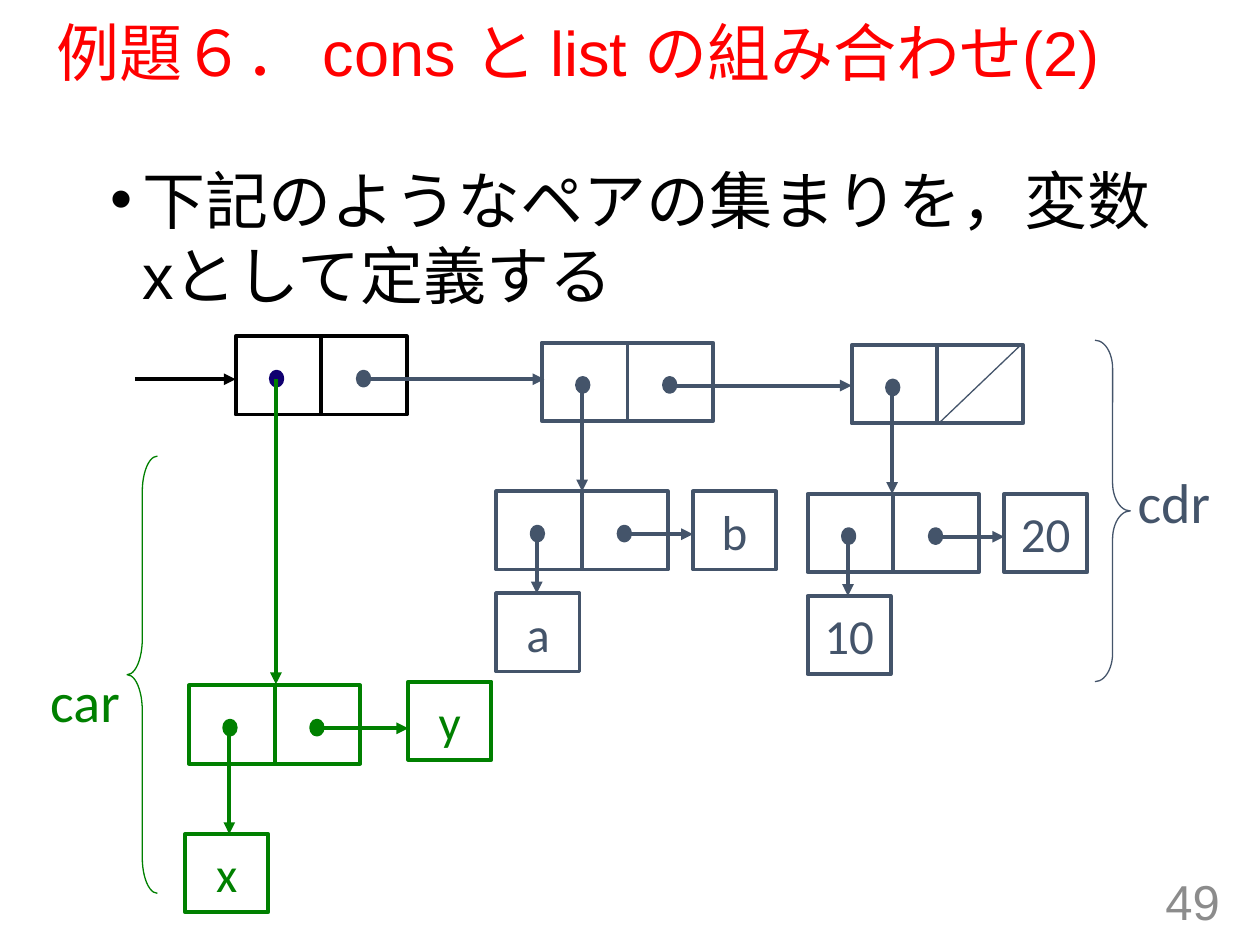
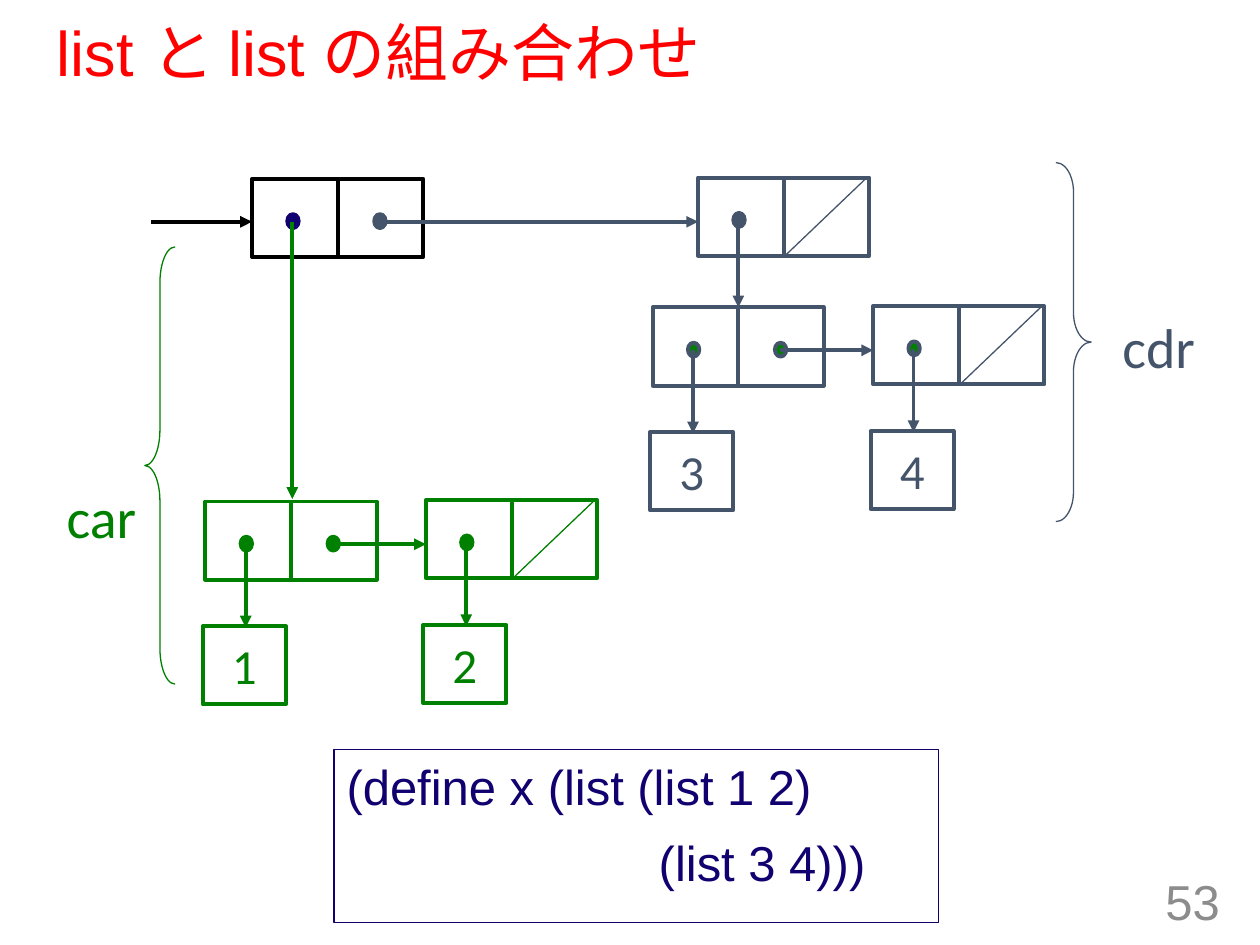
from collections import namedtuple
from dataclasses import dataclass

from lxml import etree
from pptx import Presentation
from pptx import util as u
from pptx.dml.color import RGBColor
from pptx.enum import shapes, text
from pptx.oxml.ns import qn

EMU_PER_PX = 9144
PAIR_WIDTH, CELL_HEIGHT, VALUE_WIDTH = 136, 62, 66
Pair = namedtuple("Pair", "car_x cdr_x pointer_y")


@dataclass(frozen=True)
class Theme:
    title: str = "FF0000"
    black: str = "000000"
    navy: str = "100070"
    green: str = "008000"
    slate: str = "44546A"
    grey: str = "8C8C8C"
    heading_font: str = "Arial"
    label_font: str = "Calibri"
    heading_size: int = 36
    label_size: int = 32
    text_size: int = 28
    thick: float = 2.25
    thin: float = 0.75


def px(*lengths):
    return [u.Emu(length * EMU_PER_PX) for length in lengths]


def write(frame, content, *, size, color, font, align=text.PP_ALIGN.LEFT,
          anchor=text.MSO_ANCHOR.TOP, wrap=True, spacing=None, space_before=0,
          hanging=0, bullet=None):
    frame.word_wrap = wrap
    frame.auto_size = text.MSO_AUTO_SIZE.NONE
    frame.vertical_anchor = anchor
    for index, line in enumerate(content.split("\n")):
        paragraph = frame.add_paragraph() if index else frame.paragraphs[0]
        paragraph.alignment = align
        paragraph.space_before = u.Pt(space_before if index else 0)
        if spacing:
            paragraph.line_spacing = spacing
        properties = paragraph._p.get_or_add_pPr()
        indent = hanging * EMU_PER_PX
        properties.set("marL", str(indent))
        properties.set("indent", str(-indent))
        if bullet:
            etree.SubElement(properties, qn("a:buChar")).set("char", bullet)
        else:
            etree.SubElement(properties, qn("a:buNone"))
        run = paragraph.add_run()
        run.text = line
        run.font.name = font
        run.font.size = u.Pt(size)
        run.font.color.rgb = RGBColor.from_string(color)


class Deck:
    def __init__(self, theme):
        self.theme = theme
        self.presentation = Presentation()
        self.presentation.slide_width, self.presentation.slide_height = px(1000, 750)
        self.slide = None

    def add_slide(self, title, number):
        theme = self.theme
        self.slide = self.presentation.slides.add_slide(self.presentation.slide_layouts[1])
        heading = self.place(self.slide.shapes.title, 35, 19, 925, 51)
        write(heading.text_frame, title, size=theme.heading_size, color=theme.title,
              font=theme.heading_font, anchor=text.MSO_ANCHOR.MIDDLE, spacing=0.9)
        footer = self.slide.shapes.add_textbox(*px(753, 695, 225, 40))
        write(footer.text_frame, str(number), size=theme.text_size, color=theme.grey,
              font=theme.heading_font, align=text.PP_ALIGN.RIGHT,
              anchor=text.MSO_ANCHOR.MIDDLE)

    def place(self, shape, *box):
        shape.left, shape.top, shape.width, shape.height = px(*box)
        return shape

    def body(self, content, *box, outline=None, **style):
        shape = self.place(self.slide.placeholders[1], *box)
        if outline:
            self.stroke(shape.line, outline, self.theme.thin)
        write(shape.text_frame, content, font=self.theme.heading_font,
              hanging=25, space_before=10, **style)

    def stroke(self, line, color, width):
        line.color.rgb = RGBColor.from_string(color)
        line.width = u.Pt(width)

    def shape(self, kind, *box, color, fill=None, width=None):
        shape = self.slide.shapes.add_shape(kind, *px(*box))
        shape.shadow.inherit = False
        if fill:
            shape.fill.solid()
            shape.fill.fore_color.rgb = RGBColor.from_string(fill)
        else:
            shape.fill.background()
        self.stroke(shape.line, color, width or self.theme.thick)
        return shape

    def line(self, *ends, color, width=None, arrow=False):
        connector = self.slide.shapes.add_connector(shapes.MSO_CONNECTOR.STRAIGHT, *px(*ends))
        self.stroke(connector.line, color, width or self.theme.thick)
        if arrow:
            tail = etree.SubElement(connector.line._get_or_add_ln(), qn("a:tailEnd"))
            tail.set("type", "triangle")
        etree.SubElement(connector._element.spPr, qn("a:effectLst"))

    def arrow(self, *ends, color):
        self.line(*ends, color=color, arrow=True)

    def dot(self, x, y, fill, color):
        self.shape(shapes.MSO_SHAPE.OVAL, x, y, 9, 11, color=color, fill=fill)

    def pair(self, x, y, color, end=False, dots=None):
        middle = x + PAIR_WIDTH // 2
        self.shape(shapes.MSO_SHAPE.RECTANGLE, x, y, PAIR_WIDTH, CELL_HEIGHT, color=color)
        self.line(middle, y, middle, y + CELL_HEIGHT, color=color)
        fills = dots or (color, color)
        outlines = fills if color == self.theme.black else (color, color)
        self.dot(x + 28, y + 28, fills[0], outlines[0])
        if end:
            self.line(x + 135, y - 1, x + 69, y + CELL_HEIGHT, color=color, width=self.theme.thin)
        else:
            self.dot(x + 97, y + 28, fills[1], outlines[1])
        return Pair(x + 32, x + 101, y + 34)

    def car_arrow(self, pair, bottom, color):
        self.arrow(pair.car_x, pair.pointer_y, pair.car_x, bottom, color=color)

    def cdr_arrow(self, pair, right, color):
        self.arrow(pair.cdr_x, pair.pointer_y, right, pair.pointer_y, color=color)

    def value(self, content, x, y, color):
        shape = self.shape(shapes.MSO_SHAPE.RECTANGLE, x, y, VALUE_WIDTH, CELL_HEIGHT, color=color)
        write(shape.text_frame, content, size=self.theme.text_size, color=color,
              font=self.theme.label_font, align=text.PP_ALIGN.CENTER,
              anchor=text.MSO_ANCHOR.MIDDLE, wrap=False)

    def label(self, content, x, y, color):
        box = self.slide.shapes.add_textbox(*px(x, y, 78, 64))
        write(box.text_frame, content, size=self.theme.label_size, color=color,
              font=self.theme.label_font, wrap=False)

    def brace(self, *box, color, curve, flip=False):
        shape = self.shape(shapes.MSO_SHAPE.RIGHT_BRACE, *box, color=color, width=self.theme.thin)
        shape.adjustments[0] = curve
        if flip:
            shape._element.spPr.find(qn("a:xfrm")).set("flipH", "1")

    def root(self, x, y):
        theme = self.theme
        pair = self.pair(x, y, theme.black, dots=(theme.navy, theme.slate))
        self.arrow(x - 80, pair.pointer_y, x, pair.pointer_y, color=theme.black)
        return pair

    def car_group(self, x, y, label_x, label_y):
        self.brace(x, y, 24, 347, color=self.theme.green, curve=1.18, flip=True)
        self.label("car", label_x, label_y, self.theme.green)

    def cdr_group(self, x, y, height, curve, label_x, label_y):
        self.brace(x, y, 28, height, color=self.theme.slate, curve=curve)
        self.label("cdr", label_x, label_y, self.theme.slate)


def cons_and_list(deck):
    theme = deck.theme
    green, slate = theme.green, theme.slate
    deck.add_slide("例題６． cons と list の組み合わせ(2)", 49)
    deck.body("下記のようなペアの集まりを，変数xとして定義する", 78, 123, 850, 149,
              size=theme.heading_size, color=theme.black, bullet="•")
    root = deck.root(187, 267)
    first = deck.pair(430, 272, slate)
    second = deck.pair(676, 274, slate, end=True)
    deck.car_arrow(root, 543, green)
    deck.cdr_arrow(root, 432, slate)
    deck.cdr_arrow(first, 676, slate)
    deck.car_arrow(first, 390, slate)
    deck.car_arrow(second, 392, slate)

    for x, y, color, car, car_x, car_y, cdr, cdr_x, cdr_y in (
        (150, 544, green, "x", 147, 662, "y", 324, 541),
        (394, 390, slate, "a", 394, 471, "b", 550, 390),
        (641, 392, slate, "10", 641, 473, "20", 797, 392),
    ):
        pair = deck.pair(x, y, color)
        deck.car_arrow(pair, car_y, color)
        deck.cdr_arrow(pair, cdr_x, color)
        deck.value(car, car_x, car_y, color)
        deck.value(cdr, cdr_x, cdr_y, color)

    deck.car_group(101, 362, 30, 524)
    deck.cdr_group(869, 270, 271, 0.8, 893, 366)


def list_and_list(deck):
    theme = deck.theme
    green, slate = theme.green, theme.slate
    deck.add_slide("list と list の組み合わせ", 53)
    deck.body("(define x (list (list 1 2)\n                       (list 3 4)))",
              265, 595, 480, 137, outline=theme.navy, size=theme.text_size, color=theme.navy)
    root = deck.root(200, 142)
    outer = deck.pair(554, 141, slate, end=True)
    deck.car_arrow(root, 396, green)
    deck.cdr_arrow(root, 554, slate)
    deck.car_arrow(outer, 244, slate)

    for x, y, color, values in ((163, 398, green, "12"), (518, 244, slate, "34")):
        dots = (green, green)
        head = deck.pair(x, y, color, dots=dots)
        tail = deck.pair(x + 175, y - 1, color, end=True, dots=dots)
        deck.cdr_arrow(head, x + 175, color)
        for pair, value, value_x, value_y in zip(
            (head, tail), values, (x - 2, x + 173), (y + 99, y + 98)
        ):
            deck.car_arrow(pair, value_y + 1, color)
            deck.value(value, value_x, value_y, color)

    deck.car_group(115, 196, 43, 378)
    deck.cdr_group(838, 129, 285, 0.84, 881, 243)


def main():
    deck = Deck(Theme())
    cons_and_list(deck)
    list_and_list(deck)
    deck.presentation.save("out.pptx")


if __name__ == "__main__":
    main()
